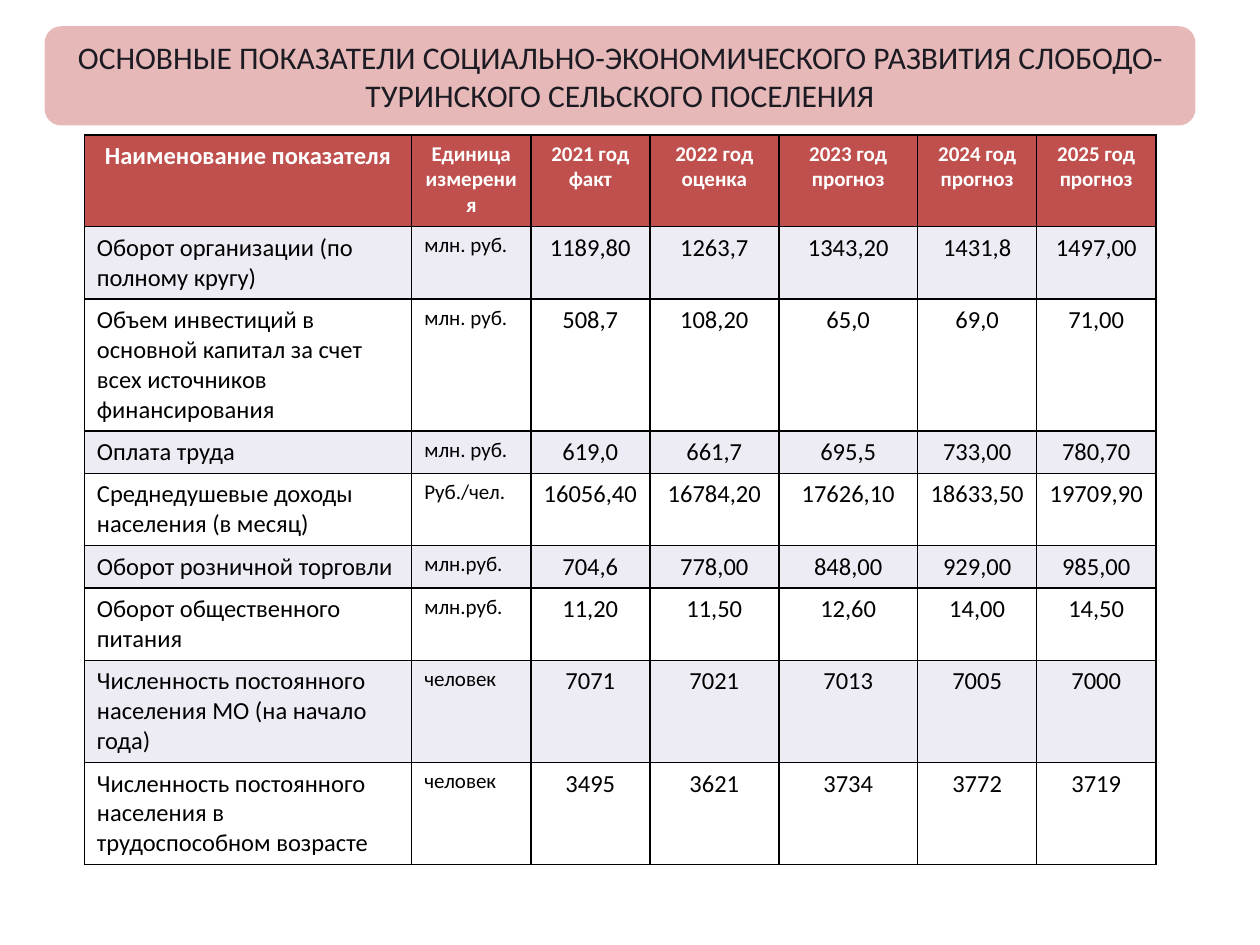
from dataclasses import dataclass

from lxml import etree
from pptx import Presentation
from pptx.dml.color import RGBColor
from pptx.enum.shapes import MSO_SHAPE
from pptx.enum.text import MSO_ANCHOR, PP_ALIGN
from pptx.oxml.ns import qn
from pptx.util import Cm, Pt

ROUNDED = MSO_SHAPE.ROUNDED_RECTANGLE
MIDDLE = MSO_ANCHOR.MIDDLE
LEFT, CENTER = PP_ALIGN.LEFT, PP_ALIGN.CENTER

TITLE = ("ОСНОВНЫЕ ПОКАЗАТЕЛИ СОЦИАЛЬНО-ЭКОНОМИЧЕСКОГО РАЗВИТИЯ "
         "СЛОБОДО-ТУРИНСКОГО СЕЛЬСКОГО ПОСЕЛЕНИЯ")
HEADER = ["Наименование показателя", "Единица измерения", "2021 год факт",
          "2022 год оценка", "2023 год прогноз", "2024 год прогноз",
          "2025 год\nпрогноз"]
INDICATORS = [
    ["Оборот организации (по полному кругу)", "млн. руб.",
     "1189,80", "1263,7", "1343,20", "1431,8", "1497,00"],
    ["Объем инвестиций в основной капитал за счет всех источников финансирования",
     "млн. руб.", "508,7", "108,20", "65,0", "69,0", "71,00"],
    ["Оплата труда", "млн. руб.",
     "619,0", "661,7", "695,5", "733,00", "780,70"],
    ["Среднедушевые доходы населения (в месяц)", "Руб./чел.",
     "16056,40", "16784,20", "17626,10", "18633,50", "19709,90"],
    ["Оборот розничной торговли", "млн.руб.",
     "704,6", "778,00", "848,00", "929,00", "985,00"],
    ["Оборот общественного питания", "млн.руб.",
     "11,20", "11,50", "12,60", "14,00", "14,50"],
    ["Численность постоянного населения МО (на начало года)", "человек",
     "7071", "7021", "7013", "7005", "7000"],
    ["Численность постоянного населения в трудоспособном возрасте", "человек",
     "3495", "3621", "3734", "3772", "3719"],
]
COL_WIDTHS = [6.6, 2.4, 2.4, 2.6, 2.8, 2.4, 2.4]
ROW_HEIGHTS = [1.85, 1.37, 2.51, 0.81, 1.37, 0.81, 1.37, 1.93, 1.96]


@dataclass(frozen=True)
class Theme:
    font: str = "Calibri"
    banner: str = "E6B9B8"
    title: str = "1C1B23"
    header: str = "C0504D"
    header_text: str = "FFFFFF"
    text: str = "000000"
    bands: tuple = ("EDECF5", "FFFFFF")
    border: str = "000000"
    border_pt: float = 0.96
    title_pt: int = 18
    body_pt: int = 14
    small_pt: int = 12


class SlideBuilder:
    def __init__(self, slide, theme):
        self.slide = slide
        self.theme = theme

    def format_text(self, tf, size, color, align, bold=False):
        for p in tf.paragraphs:
            p.alignment = align
            for r in p.runs:
                r.font.name = self.theme.font
                r.font.size = Pt(size)
                r.font.bold = bold
                r.font.color.rgb = RGBColor.from_string(color)

    def banner(self, text, left, top, width, height):
        t = self.theme
        sp = self.slide.shapes.add_shape(
            ROUNDED, Cm(left), Cm(top), Cm(width), Cm(height))
        sp.shadow.inherit = False
        sp.fill.solid()
        sp.fill.fore_color.rgb = RGBColor.from_string(t.banner)
        sp.line.fill.background()
        tf = sp.text_frame
        tf.word_wrap = True
        tf.vertical_anchor = MIDDLE
        tf.text = text
        self.format_text(tf, t.title_pt, t.title, CENTER)

    def table(self, rows, left, top, widths, heights):
        tbl = self.slide.shapes.add_table(
            len(rows), len(widths), Cm(left), Cm(top),
            Cm(sum(widths)), Cm(sum(heights))).table
        for col, width in zip(tbl.columns, widths):
            col.width = Cm(width)
        for row, height in zip(tbl.rows, heights):
            row.height = Cm(height)
        for i, values in enumerate(rows):
            for j, value in enumerate(values):
                self.cell(tbl.cell(i, j), value, i, j)

    def cell(self, cell, value, i, j):
        t = self.theme
        is_header = i == 0
        is_small = j == 1 or (is_header and j > 0)
        cell.text_frame.text = value
        self.format_text(
            cell.text_frame,
            t.small_pt if is_small else t.body_pt,
            t.header_text if is_header else t.text,
            CENTER if is_header or j > 1 else LEFT,
            bold=is_header)
        self.borders(cell)
        cell.fill.solid()
        fill = t.header if is_header else t.bands[(i - 1) % 2]
        cell.fill.fore_color.rgb = RGBColor.from_string(fill)

    def borders(self, cell):
        tc_pr = cell._tc.get_or_add_tcPr()
        for side in ("a:lnL", "a:lnR", "a:lnT", "a:lnB"):
            ln = etree.SubElement(tc_pr, qn(side), w=str(Pt(self.theme.border_pt)))
            fill = etree.SubElement(ln, qn("a:solidFill"))
            etree.SubElement(fill, qn("a:srgbClr"), val=self.theme.border)


def main():
    prs = Presentation()
    prs.slide_width, prs.slide_height = Cm(25.4), Cm(19.05)
    s = SlideBuilder(prs.slides.add_slide(prs.slide_layouts[6]), Theme())
    s.banner(TITLE, 0.9, 0.53, 23.2, 2)
    s.table([HEADER] + INDICATORS, 1.7, 2.72, COL_WIDTHS, ROW_HEIGHTS)
    prs.save("out.pptx")


if __name__ == "__main__":
    main()
